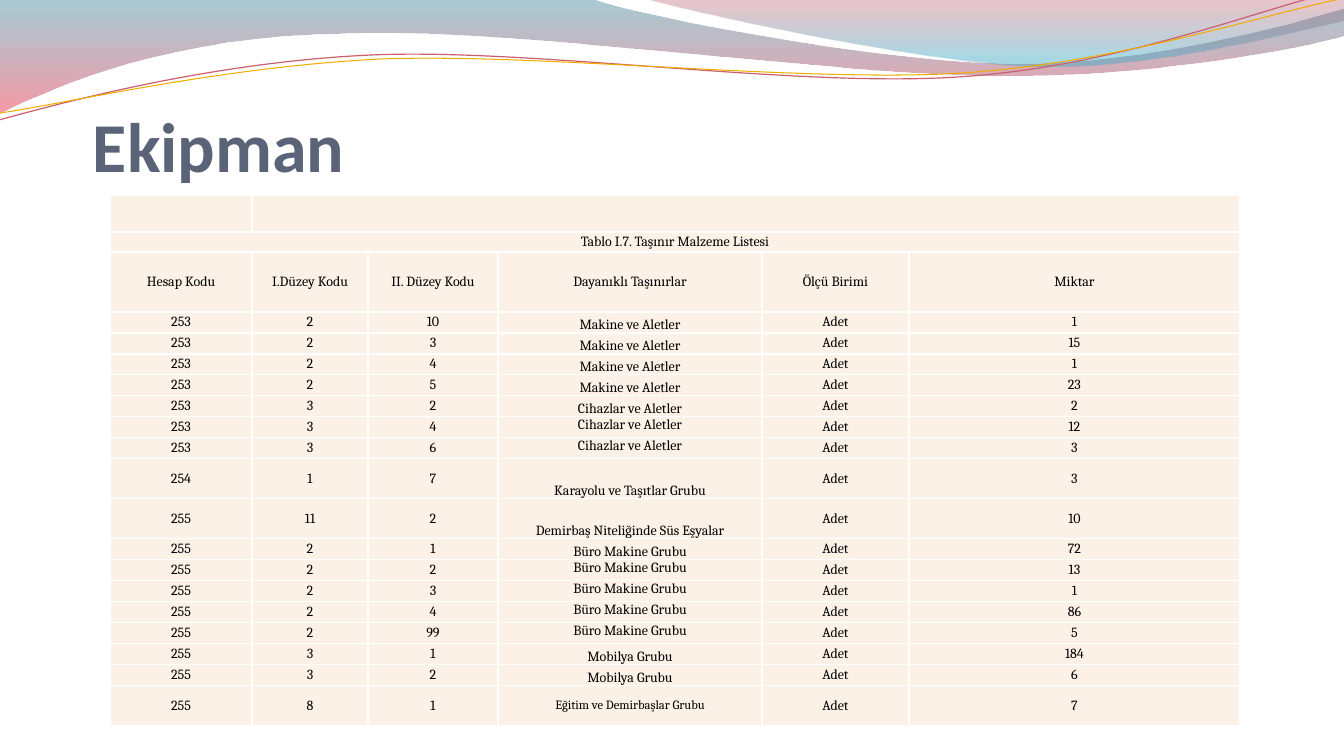
from dataclasses import dataclass

from lxml.etree import SubElement
from pptx import Presentation
from pptx.dml.color import RGBColor
from pptx.enum.text import MSO_ANCHOR, PP_ALIGN
from pptx.oxml.ns import qn
from pptx.oxml.xmlchemy import OxmlElement
from pptx.util import Pt

PX = 914400 / 100.8


@dataclass(frozen=True)
class Theme:
    title_color: str = "5A6378"
    text_color: str = "000000"
    cell_fill: str = "FCF1E7"
    border: str = "FFFFFF"
    border_width: int = 1
    red_line: str = "CB5F6E"
    gold_line: str = "F0AD00"
    back_wave: tuple = ((0, "3F8A9F", 45), (1, "EF445B", 55))
    front_wave: tuple = ((0, "B84253", 30), (0.8, "42ABC7", 45))
    title_font: str = "Calibri"
    table_font: str = "Cambria"
    title_size: int = 50
    table_size: int = 10
    small_size: int = 9


THEME = Theme()
TOP, MIDDLE, BOTTOM = MSO_ANCHOR.TOP, MSO_ANCHOR.MIDDLE, MSO_ANCHOR.BOTTOM

BACK_WAVE = [
    ((0, 0),),
    ((592, -1),),
    ((639, 17), (892, 64), (1019, 64)),
    ((1147, 64), (1288, 26), (1344, 9)),
    ((1346, 36),),
    ((1321, 44), (1169, 77), (1002, 76)),
    ((836, 76), (513, 28), (346, 34)),
    ((173, 36), (61, 84), (-1, 114)),
]
FRONT_WAVE = [
    ((644, -1),),
    ((684, 11), (916, 62), (1033, 66)),
    ((1149, 70), (1292, 32), (1344, 21)),
    ((1344, 0),),
]
RED_LINE = [
    ((-1, 120),),
    ((65, 102), (213, 62), (372, 55)),
    ((531, 48), (796, 88), (958, 77)),
    ((1119, 67), (1262, 8), (1342, -10)),
]
GOLD_LINE = [
    ((0, 113),),
    ((64, 104), (220, 67), (381, 59)),
    ((541, 53), (802, 83), (963, 73)),
    ((1124, 62), (1265, 14), (1345, -2)),
]

CAPTION = "Tablo I.7. Taşınır Malzeme Listesi"
HEADINGS = ["Hesap Kodu", "I.Düzey Kodu", "II. Düzey Kodu",
            "Dayanıklı Taşınırlar", "Ölçü Birimi", "Miktar"]
UNIT = "Adet"
EQUIPMENT = [
    (253, 2, 10, "Makine ve Aletler", 1, BOTTOM),
    (253, 2, 3, "Makine ve Aletler", 15, BOTTOM),
    (253, 2, 4, "Makine ve Aletler", 1, BOTTOM),
    (253, 2, 5, "Makine ve Aletler", 23, BOTTOM),
    (253, 3, 2, "Cihazlar ve Aletler", 2, BOTTOM),
    (253, 3, 4, "Cihazlar ve Aletler", 12, TOP),
    (253, 3, 6, "Cihazlar ve Aletler", 3, TOP),
    (254, 1, 7, "Karayolu ve Taşıtlar Grubu", 3, BOTTOM),
    (255, 11, 2, "Demirbaş Niteliğinde Süs Eşyalar", 10, BOTTOM),
    (255, 2, 1, "Büro Makine Grubu", 72, BOTTOM),
    (255, 2, 2, "Büro Makine Grubu", 13, TOP),
    (255, 2, 3, "Büro Makine Grubu", 1, TOP),
    (255, 2, 4, "Büro Makine Grubu", 86, TOP),
    (255, 2, 99, "Büro Makine Grubu", 5, TOP),
    (255, 3, 1, "Mobilya Grubu", 184, BOTTOM),
    (255, 3, 2, "Mobilya Grubu", 6, BOTTOM),
    (255, 8, 1, "Eğitim ve Demirbaşlar Grubu", 7, MIDDLE),
]
COLUMN_WIDTHS = [142, 116, 130, 264, 147, 331]
ROW_HEIGHTS = [37, 20, 60] + [21] * 7 + [40] * 2 + [21] * 7 + [40]


def px(length):
    return round(length * PX)


def rgb(color):
    return RGBColor.from_string(color)


def apply(target, values):
    for name, value in values.items():
        setattr(target, name, value)


def write(frame, text, font, size, color, align, bold=False):
    paragraph = frame.paragraphs[0]
    paragraph.alignment = align
    run = paragraph.add_run()
    run.text = text
    apply(run.font, {"name": font, "size": Pt(size), "bold": bold})
    run.font.color.rgb = rgb(color)


def trace(slide, segments, close):
    start, *corners = [(px(x), px(y)) for segment in segments for x, y in segment]
    builder = slide.shapes.build_freeform(*start)
    builder.add_line_segments(corners, close=close)
    outline = builder.convert_to_shape()
    outline.shadow.inherit = False
    strokes = iter(list(outline.element.iter(qn("a:lnTo"))))
    for segment in segments[1:]:
        pieces = [next(strokes) for _ in segment]
        if len(pieces) == 3:
            curve = OxmlElement("a:cubicBezTo")
            pieces[0].addprevious(curve)
            for piece in pieces:
                curve.append(piece[0])
                piece.getparent().remove(piece)
    return outline


def add_wave(slide, segments, stops):
    wave = trace(slide, segments, True)
    wave.line.fill.background()
    wave.fill.gradient()
    wave.fill.gradient_angle = 270
    for stop, (position, color, _) in zip(wave.fill.gradient_stops, stops):
        stop.position = position
        stop.color.rgb = rgb(color)
    for tint, (_, _, opacity) in zip(wave.element.iter(qn("a:srgbClr")), stops):
        SubElement(tint, qn("a:alpha"), val=str(opacity * 1000))


def add_wavy_line(slide, segments, color, width):
    wavy_line = trace(slide, segments, False)
    wavy_line.fill.background()
    wavy_line.line.color.rgb = rgb(color)
    wavy_line.line.width = Pt(width)


def add_title(slide, text):
    title = slide.shapes.title
    slide.shapes.element.append(title.element)
    apply(title, {"left": px(93), "top": px(41), "width": px(344), "height": px(146)})
    apply(title.text_frame, {"margin_left": 0, "margin_right": 0, "margin_top": px(5),
                             "margin_bottom": 0, "vertical_anchor": BOTTOM,
                             "word_wrap": True})
    write(title.text_frame, text, THEME.title_font, THEME.title_size,
          THEME.title_color, PP_ALIGN.LEFT, True)


def format_cell(cell):
    apply(cell, {"margin_left": px(4), "margin_right": px(4), "margin_top": 0,
                 "margin_bottom": 0, "vertical_anchor": MIDDLE})
    properties = cell._tc.get_or_add_tcPr()
    for side in ("a:lnL", "a:lnR", "a:lnT", "a:lnB"):
        edge = SubElement(properties, qn(side), w=str(Pt(THEME.border_width)))
        SubElement(SubElement(edge, qn("a:solidFill")), qn("a:srgbClr"), val=THEME.border)
    cell.fill.solid()
    cell.fill.fore_color.rgb = rgb(THEME.cell_fill)


def write_cell(cell, text, size=THEME.table_size):
    write(cell.text_frame, str(text), THEME.table_font, size,
          THEME.text_color, PP_ALIGN.CENTER)


def add_equipment_table(slide):
    table = slide.shapes.add_table(
        len(ROW_HEIGHTS), len(COLUMN_WIDTHS), px(110), px(195),
        px(sum(COLUMN_WIDTHS)), px(sum(ROW_HEIGHTS))).table
    apply(table, {"first_row": False, "horz_banding": False})
    for column, width in zip(table.columns, COLUMN_WIDTHS):
        column.width = px(width)
    for row, height in zip(table.rows, ROW_HEIGHTS):
        row.height = px(height)
    for cell in table.iter_cells():
        format_cell(cell)
    table.cell(0, 1).merge(table.cell(0, 5))
    table.cell(1, 0).merge(table.cell(1, 5))
    write_cell(table.cell(1, 0), CAPTION)
    for column, heading in enumerate(HEADINGS):
        write_cell(table.cell(2, column), heading)
    for row, (account, level1, level2, goods, amount, anchor) in enumerate(EQUIPMENT, 3):
        for column, value in enumerate((account, level1, level2, goods, UNIT, amount)):
            small = value == EQUIPMENT[-1][3]
            write_cell(table.cell(row, column), value,
                       THEME.small_size if small else THEME.table_size)
        table.cell(row, 3).vertical_anchor = anchor


def main():
    deck = Presentation()
    apply(deck, {"slide_width": px(1344), "slide_height": px(756)})
    slide = deck.slides.add_slide(deck.slide_layouts[5])
    add_wave(slide, BACK_WAVE, THEME.back_wave)
    add_wave(slide, FRONT_WAVE, THEME.front_wave)
    add_wavy_line(slide, RED_LINE, THEME.red_line, 0.85)
    add_wavy_line(slide, GOLD_LINE, THEME.gold_line, 0.75)
    add_title(slide, "Ekipman")
    add_equipment_table(slide)
    deck.save("out.pptx")


if __name__ == "__main__":
    main()
